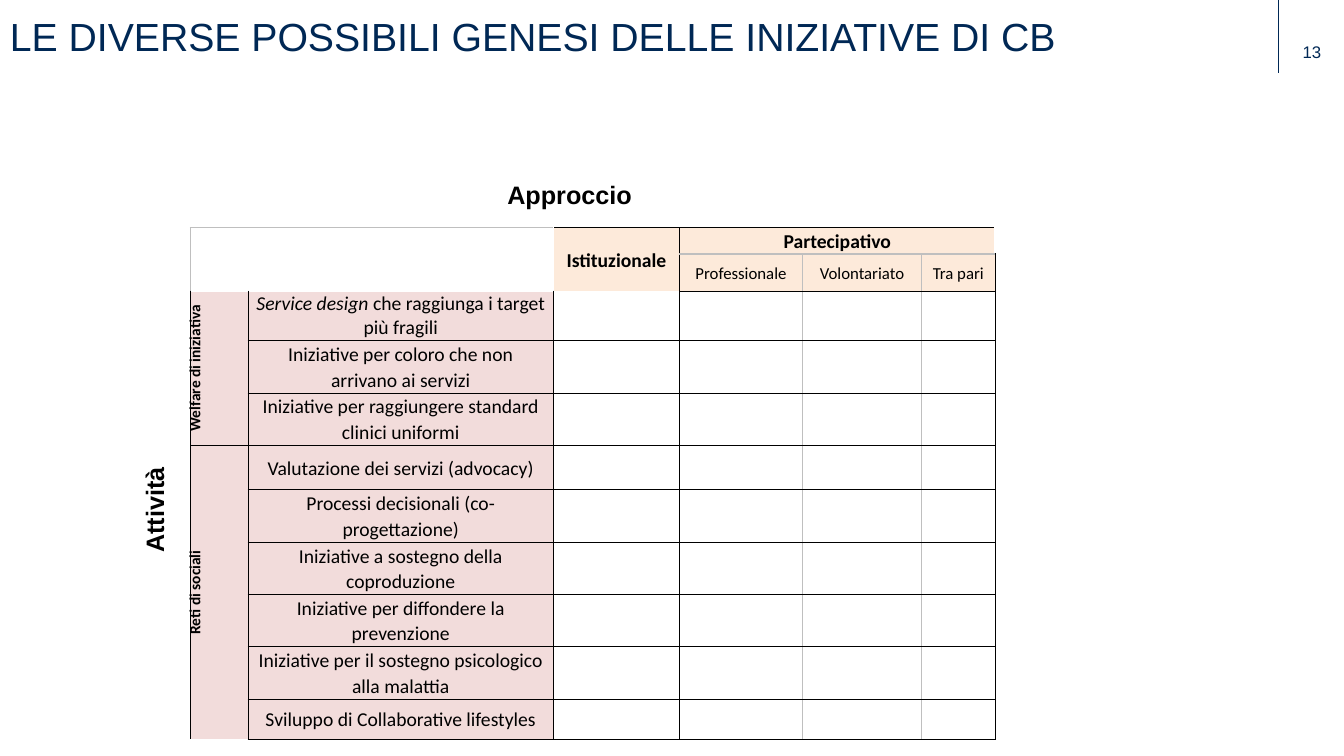
from collections import namedtuple
from dataclasses import dataclass

from lxml.etree import SubElement
from pptx import Presentation
from pptx.dml.color import RGBColor
from pptx.enum.shapes import MSO_CONNECTOR
from pptx.enum.text import MSO_ANCHOR, PP_ALIGN
from pptx.oxml import parse_xml
from pptx.oxml.ns import nsdecls, qn
from pptx.util import Inches, Pt

Box = namedtuple("Box", "left top width height")


@dataclass(frozen=True)
class Theme:
    navy: str = "002855"
    black: str = "000000"
    grey: str = "BFBFBF"
    white: str = "FFFFFF"
    peach: str = "FDEADA"
    rose: str = "F2DCDB"
    heading_font: str = "Arial"
    table_font: str = "Calibri"
    title: int = 28
    axis: int = 18
    body: int = 14
    small: int = 12
    group: int = 11


THEME = Theme()
COLUMNS = (0.57, 3.03, 1.25, 1.22, 1.18, 0.73)
ROWS = (0.26, 0.37, 0.49, 0.52, 0.52, 0.44, 0.52, 0.52, 0.52, 0.52, 0.4)
# (row, column): (rows, columns)
MERGES = {(0, 0): (2, 2), (0, 2): (2, 1), (0, 3): (1, 3), (2, 0): (3, 1), (5, 0): (6, 1)}
HEADINGS = {(0, 2): "Istituzionale", (0, 3): "Partecipativo"}
APPROACHES = ("Professionale", "Volontariato", "Tra pari")
GROUPS = {2: "Welfare di iniziativa", 5: "Reti di sociali"}
ACTIVITIES = (
    "che raggiunga i target più fragili",
    "Iniziative per coloro che non arrivano ai servizi",
    "Iniziative per raggiungere standard clinici uniformi",
    "Valutazione dei servizi (advocacy)",
    "Processi decisionali (co-progettazione)",
    "Iniziative a sostegno della coproduzione",
    "Iniziative per diffondere la prevenzione",
    "Iniziative per il sostegno psicologico alla malattia",
    "Sviluppo di Collaborative lifestyles",
)


def write(frame, text, *, size, font=THEME.heading_font, color=THEME.black, bold=False,
          align=PP_ALIGN.CENTER, spacing=None, italic_lead=""):
    para = frame.paragraphs[0]
    para.alignment = align
    if spacing:
        para.line_spacing = spacing
    for part, italic in ((italic_lead, True), (text, False)):
        if part:
            span = para.add_run()
            span.text = part
            span.font.name, span.font.size = font, Pt(size)
            span.font.bold, span.font.italic = bold, italic
            span.font.color.rgb = RGBColor.from_string(color)


def add_text(slide, box, text, *, margins=True, wrap=True, rotation=0, **style):
    shape = slide.shapes.add_textbox(*map(Inches, box))
    shape.rotation = rotation
    frame = shape.text_frame
    frame.word_wrap = wrap
    if not margins:
        frame.margin_left = frame.margin_right = frame.margin_top = frame.margin_bottom = 0
    write(frame, text, **style)


def add_header(slide, box):
    add_text(slide, Box(box.left, box.top + 0.07, box.width * 0.81, 1.16),
             "LE DIVERSE POSSIBILI GENESI DELLE INIZIATIVE DI CB",
             size=THEME.title, color=THEME.navy, align=PP_ALIGN.LEFT)
    rule_left = Inches(box.left + box.width - 0.65)
    rule = slide.shapes.add_connector(MSO_CONNECTOR.STRAIGHT, rule_left, Inches(box.top),
                                      rule_left, Inches(box.top + box.height))
    rule.line.color.rgb = RGBColor.from_string(THEME.navy)
    rule.line.width = Pt(1)
    SubElement(rule.element.spPr, qn("a:effectLst"))
    add_text(slide, Box(box.left + box.width - 0.41, box.top + 0.41, 0.41, 0.4), "13",
             margins=False, size=THEME.small, color=THEME.navy, align=PP_ALIGN.LEFT)


def merge_owners():
    """Map each merged grid position to the position that starts its block."""
    return {(row + down, column + across): (row, column)
            for (row, column), (height, width) in MERGES.items()
            for down in range(height) for across in range(width)}


def cell_edges(row, column):
    """Yield tag, neighbour and whether the edge is grey, for each cell side."""
    corner = row < 2 and column < 2
    yield "lnL", (row, column - 1), column in (4, 5) or corner and column == 0
    yield "lnR", (row, column + 1), column in (3, 4)
    yield "lnT", (row - 1, column), row == 1 and column > 2 or corner and row == 0
    yield "lnB", (row + 1, column), row == 0 and column > 2


def draw_borders(cell, row, column, owners):
    properties = cell._tc.get_or_add_tcPr()
    position = 0
    for tag, neighbour, is_grey in cell_edges(row, column):
        if (row, column) in owners and owners[row, column] == owners.get(neighbour):
            continue
        color, width = (THEME.grey, Pt(1)) if is_grey else (THEME.black, Pt(0.75))
        properties.insert(position, parse_xml(
            f'<a:{tag} {nsdecls("a")} w="{int(width)}"><a:solidFill>'
            f'<a:srgbClr val="{color}"/></a:solidFill></a:{tag}>'))
        position += 1


def cell_fill(row, column):
    if row < 2:
        return THEME.peach if column > 1 else THEME.white
    return THEME.rose if column < 2 else THEME.white


def fill_labels(table):
    style = dict(font=THEME.table_font, spacing=1.07)
    for (row, column), text in HEADINGS.items():
        write(table.cell(row, column).text_frame, text, size=THEME.body, bold=True, **style)
    for column, text in enumerate(APPROACHES, 3):
        write(table.cell(1, column).text_frame, text, size=THEME.small, **style)
    for row, text in GROUPS.items():
        cell = table.cell(row, 0)
        cell._tc.get_or_add_tcPr().set("vert", "vert270")
        write(cell.text_frame, text, size=THEME.group, font=THEME.table_font,
              bold=True, spacing=Pt(10))
    for row, text in enumerate(ACTIVITIES, 2):
        first = row == 2
        write(table.cell(row, 1).text_frame, text, size=THEME.body, font=THEME.table_font,
              spacing=None if first else 1.07, italic_lead="Service design " if first else "")


def add_matrix(slide, box):
    frame = slide.shapes.add_table(len(ROWS), len(COLUMNS), *map(Inches, box))
    table = frame.table
    table.first_row = table.horz_banding = False
    for column, share in zip(table.columns, COLUMNS):
        column.width = Inches(box.width * share / sum(COLUMNS))
    for row, share in zip(table.rows, ROWS):
        row.height = Inches(box.height * share / sum(ROWS))
    for (row, column), (height, width) in MERGES.items():
        table.cell(row, column).merge(table.cell(row + height - 1, column + width - 1))
    fill_labels(table)
    owners = merge_owners()
    for row in range(len(ROWS)):
        for column in range(len(COLUMNS)):
            cell = table.cell(row, column)
            cell.margin_left = cell.margin_right = Inches(0.07)
            cell.margin_top = cell.margin_bottom = 0
            cell.vertical_anchor = MSO_ANCHOR.MIDDLE
            cell.fill.solid()
            cell.fill.fore_color.rgb = RGBColor.from_string(cell_fill(row, column))
            draw_borders(cell, row, column, owners)
            if not cell.text:
                end = SubElement(cell.text_frame.paragraphs[0]._p, qn("a:endParaRPr"))
                end.set("sz", str(THEME.small * 100))


def add_axis_labels(slide):
    style = dict(size=THEME.axis, bold=True, wrap=False)
    add_text(slide, Box(4.85, 1.73, 1.6, 0.44), "Approccio", **style)
    add_text(slide, Box(0.93, 4.84, 1.24, 0.44), "Attività", rotation=270, **style)


def main():
    deck = Presentation()
    deck.slide_width, deck.slide_height = Inches(13.33), Inches(7.5)
    slide = deck.slides.add_slide(deck.slide_layouts[6])
    add_header(slide, Box(0, 0, 13.33, 0.72))
    add_matrix(slide, Box(1.89, 2.26, sum(COLUMNS), sum(ROWS)))
    add_axis_labels(slide)
    deck.save("out.pptx")


if __name__ == "__main__":
    main()
